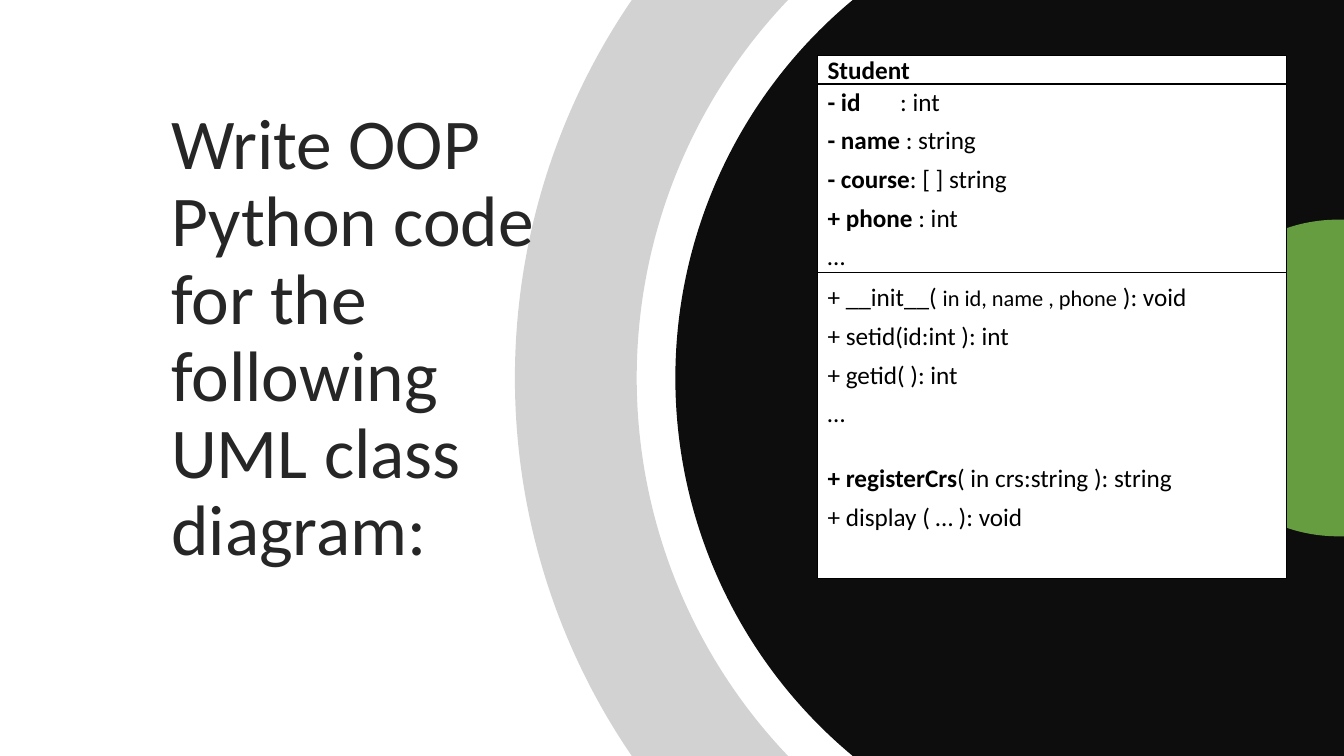
from dataclasses import dataclass
from math import asin, cos, sin, tan

from lxml.etree import SubElement
from pptx import Presentation
from pptx.dml.color import RGBColor
from pptx.enum.shapes import MSO_SHAPE as Shape
from pptx.enum.text import MSO_ANCHOR as Anchor, PP_ALIGN as Align
from pptx.oxml.ns import qn
from pptx.util import Inches, Pt

# Grid of 160 columns by 90 rows, twelve cells to the inch
COLUMNS, ROWS = 160, 90
MIDDLE = ROWS / 2


@dataclass(frozen=True)
class Theme:
    font: str = "Calibri"
    title_size: float = 51
    body_size: float = 18
    small_size: float = 16
    title: str = "262626"
    text: str = "000000"
    paper: str = "FFFFFF"
    disc: str = "0D0D0D"
    ring: str = "808080"
    accent: str = "70AD47"


THEME = Theme()

# Each line is a list of (text, style) runs
ATTRIBUTES = [
    [("- id", "bold"), ("\t: int", "")],
    [("- name", "bold"), (" : string", "")],
    [("- course", "bold"), (": [ ] string", "")],
    [("+ phone ", "bold"), (": int", "")],
    [("…", "")],
]
METHODS = [
    [("+ __init__( ", ""), ("in id, name , phone", "small"), (" ): void", "")],
    [("+ setid(id:int ): int", "")],
    [("+ getid( ): int", "")],
    [("…", "")],
    [("+ registerCrs", "bold"), ("( in crs:string ): string", "")],
    [("+ display ( … ): void", "")],
]


def cells(count):
    return Inches(count / 12)


def set_font(font, size, color):
    font.name = THEME.font
    font.size = Pt(size)
    font.color.rgb = RGBColor.from_string(color)


def left_arc(center, radius, half_height):
    """Seven points of two Bezier curves down a circle's left side."""
    limit = asin(half_height / radius)
    pull = 4 / 3 * tan(limit / 4)

    def point(angle, shift=0):
        across, down = cos(angle), sin(angle)
        return (center + radius * (shift * down - across),
                MIDDLE + radius * (down + shift * across))

    return [point(-limit), point(-limit, pull), point(0, -pull), point(0),
            point(0, pull), point(limit, -pull), point(limit)]


def bend(outline, arcs):
    """Turn the straight steps of the leading arcs into Bezier curves."""
    steps = list(outline)
    for arc in range(arcs):
        for first in (7 * arc + 1, 7 * arc + 4):
            curve = SubElement(outline, qn("a:cubicBezTo"))
            steps[first].addprevious(curve)
            for step in steps[first:first + 3]:
                curve.append(step[0])
                outline.remove(step)


def add_region(slide, points, arcs, color, opacity=100):
    points = [(cells(column), cells(row)) for column, row in points]
    builder = slide.shapes.build_freeform(*points[0])
    builder.add_line_segments(points[1:], close=True)
    shape = builder.convert_to_shape()
    bend(next(shape._element.iter(qn("a:path"))), arcs)
    shape.shadow.inherit = False
    shape.line.fill.background()
    shape.fill.solid()
    shape.fill.fore_color.rgb = RGBColor.from_string(color)
    if opacity < 100:
        rgb = shape.fill._xPr.find(qn("a:solidFill"))[0]
        SubElement(rgb, qn("a:alpha"), val=str(opacity * 1000))


def add_disc(slide, center, radius, color, opacity=100):
    """A disc cut off by the slide's right edge."""
    reach = min(radius, MIDDLE)
    edge = [(COLUMNS, MIDDLE + reach), (COLUMNS, MIDDLE - reach)]
    add_region(slide, left_arc(center, radius, reach) + edge, 1, color, opacity)


def add_ring(slide, center, outer, inner, color, opacity):
    points = left_arc(center, outer, MIDDLE) + left_arc(center, inner, MIDDLE)[::-1]
    add_region(slide, points, 2, color, opacity)


def add_title(slide, text):
    box = slide.shapes.add_textbox(cells(19.2), cells(14.28), cells(49.3), cells(61.3))
    frame = box.text_frame
    frame.word_wrap = True
    frame.vertical_anchor = Anchor.BOTTOM
    frame.margin_bottom = cells(7.62)
    paragraph = frame.paragraphs[0]
    paragraph.text = text
    paragraph.line_spacing = 0.9
    set_font(paragraph.font, THEME.title_size, THEME.title)


def add_tab_stop(paragraph, position):
    properties = paragraph._p.get_or_add_pPr()
    stops = SubElement(properties, qn("a:tabLst"))
    SubElement(stops, qn("a:tab"), pos=str(position), algn="l")


def add_line(paragraph, runs):
    paragraph.alignment = Align.LEFT
    paragraph.space_after = Pt(6)
    if any("\t" in text for text, _ in runs):
        add_tab_stop(paragraph, cells(8.65))
    set_font(paragraph.font, THEME.body_size, THEME.text)
    for text, style in runs:
        run = paragraph.add_run()
        run.text = text
        if style == "bold":
            run.font.bold = True
        elif style == "small":
            run.font.size = Pt(THEME.small_size)


def add_compartment(slide, top, height, lines, anchor=Anchor.MIDDLE):
    box = slide.shapes.add_shape(
        Shape.RECTANGLE, cells(97.34), cells(top), cells(55.8), cells(height))
    box.shadow.inherit = False
    box.fill.solid()
    box.fill.fore_color.rgb = RGBColor.from_string(THEME.paper)
    box.line.color.rgb = RGBColor.from_string(THEME.text)
    box.line.width = Pt(0.5)
    frame = box.text_frame
    frame.word_wrap = True
    frame.vertical_anchor = anchor
    for index, runs in enumerate(lines):
        paragraph = frame.paragraphs[0] if index == 0 else frame.add_paragraph()
        add_line(paragraph, runs)
    return box


def main():
    presentation = Presentation()
    presentation.slide_width = cells(COLUMNS)
    presentation.slide_height = cells(ROWS)
    slide = presentation.slides.add_slide(presentation.slide_layouts[6])

    # Backdrop and title
    add_disc(slide, 138.9, 58.5, THEME.disc)
    add_ring(slide, 141, 79.7, 65.2, THEME.ring, 35)
    add_title(slide, "Write OOP Python code for the following UML class diagram:")
    add_disc(slide, 159.3, 18.85, THEME.accent, 90)

    # Class diagram: attributes, methods, then the class name on top
    header_top, attributes_top, methods_top, bottom = 6.62, 10.08, 32.4, 68.9
    add_compartment(slide, attributes_top, methods_top - attributes_top, ATTRIBUTES)
    methods = add_compartment(
        slide, methods_top, bottom - methods_top, METHODS, Anchor.TOP)
    methods.text_frame.margin_top = cells(1.13)
    methods.text_frame.paragraphs[4].space_before = Pt(18.8)
    add_compartment(slide, header_top, 3.36, [[("Student", "bold")]])

    presentation.save("out.pptx")


if __name__ == "__main__":
    main()
